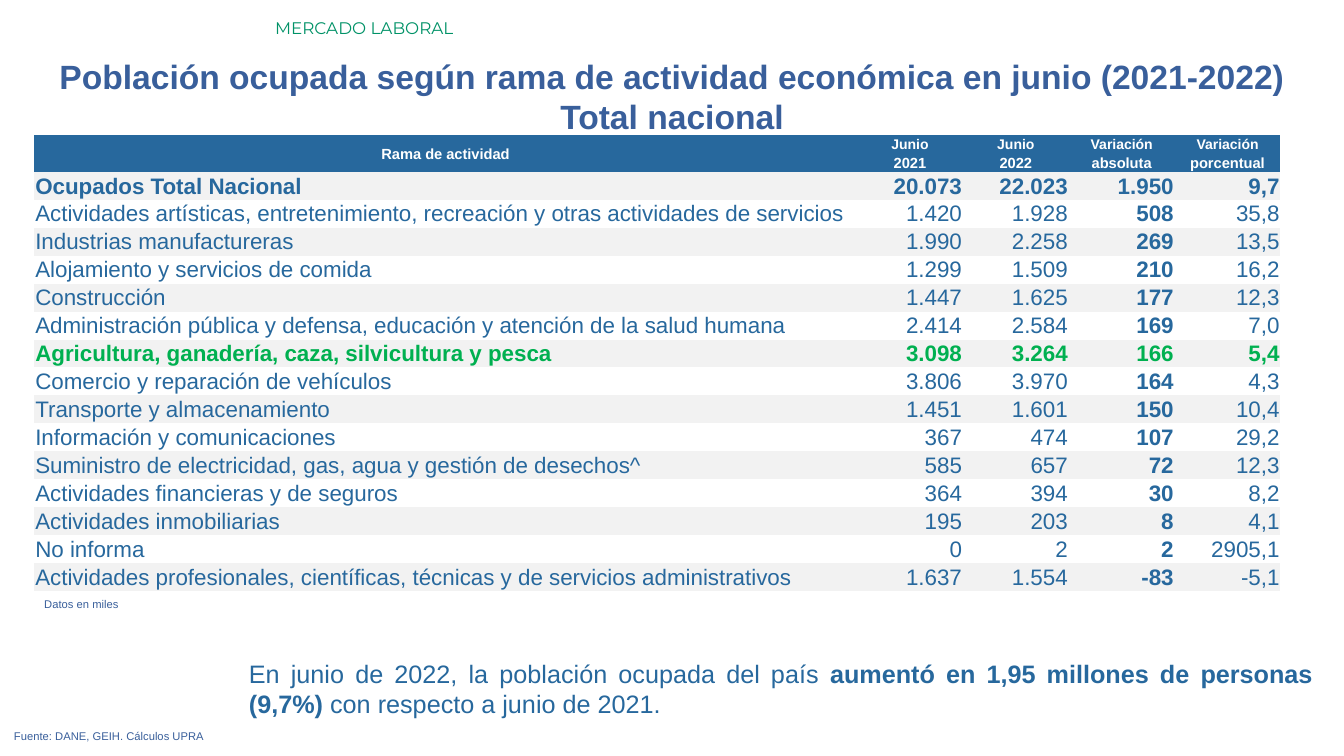
from dataclasses import dataclass

from pptx import Presentation
from pptx import util as u
from pptx.dml.color import RGBColor
from pptx.enum import text as t
from pptx.oxml import ns

COLORS = {
    "blue": "27689D",
    "navy": "395F9B",
    "teal": "009267",
    "green": "00B050",
    "band": "F2F2F2",
    "white": "FFFFFF",
}
LEFT, CENTER = t.PP_ALIGN.LEFT, t.PP_ALIGN.CENTER
RIGHT, JUSTIFY = t.PP_ALIGN.RIGHT, t.PP_ALIGN.JUSTIFY


@dataclass
class Branch:
    name: str
    june_2021: str
    june_2022: str
    change: str
    percent: str
    bold: bool = False
    color: str = "blue"


@dataclass
class Note:
    left: float
    top: float
    width: float
    height: float
    runs: list[tuple[str, bool]]
    size: float
    color: str
    align: t.PP_ALIGN = JUSTIFY
    font: str = "Arial"


HEADINGS = [
    ("Junio", "2021"),
    ("Junio", "2022"),
    ("Variación", "absoluta"),
    ("Variación", "porcentual"),
]
BRANCHES = [
    Branch("Ocupados Total Nacional", "20.073", "22.023", "1.950", "9,7", bold=True),
    Branch("Actividades artísticas, entretenimiento, recreación y otras actividades de servicios",
           "1.420", "1.928", "508", "35,8"),
    Branch("Industrias manufactureras", "1.990", "2.258", "269", "13,5"),
    Branch("Alojamiento y servicios de comida", "1.299", "1.509", "210", "16,2"),
    Branch("Construcción", "1.447", "1.625", "177", "12,3"),
    Branch("Administración pública y defensa, educación y atención de la salud humana",
           "2.414", "2.584", "169", "7,0"),
    Branch("Agricultura, ganadería, caza, silvicultura y pesca",
           "3.098", "3.264", "166", "5,4", bold=True, color="green"),
    Branch("Comercio y reparación de vehículos", "3.806", "3.970", "164", "4,3"),
    Branch("Transporte y almacenamiento", "1.451", "1.601", "150", "10,4"),
    Branch("Información y comunicaciones", "367", "474", "107", "29,2"),
    Branch("Suministro de electricidad, gas, agua y gestión de desechos^",
           "585", "657", "72", "12,3"),
    Branch("Actividades financieras y de seguros", "364", "394", "30", "8,2"),
    Branch("Actividades inmobiliarias", "195", "203", "8", "4,1"),
    Branch("No informa", "0", "2", "2", "2905,1"),
    Branch("Actividades profesionales, científicas, técnicas y de servicios administrativos",
           "1.637", "1.554", "-83", "-5,1"),
]
NOTES = [
    Note(2.63, 0.13, 10.7, 0.3, [("MERCADO LABORAL", False)], 12, "teal", LEFT, "Montserrat"),
    Note(2.37, 6.48, 10.75, 0.71, [
        ("En junio de 2022, la población ocupada del país ", False),
        ("aumentó en 1,95 millones de personas (9,7%) ", True),
        ("con respecto a junio de 2021.", False),
    ], 18, "blue"),
    Note(0.04, 7.19, 12.91, 0.24, [("Fuente: DANE, GEIH. Cálculos UPRA", False)], 8, "navy"),
    Note(0.34, 5.88, 12.91, 0.24, [("Datos en miles", False)], 8, "navy"),
]


def write(paragraph, text: str, *, size: float, color: str, bold: bool = False,
          align: t.PP_ALIGN = LEFT, font: str = "Arial") -> None:
    paragraph.alignment = align
    run = paragraph.add_run()
    run.text = text
    run.font.name = font
    run.font.size = u.Pt(size)
    run.font.bold = bold
    run.font.color.rgb = RGBColor.from_string(COLORS[color])


def add_title(slide) -> None:
    title = slide.shapes.title
    title.left, title.top = u.Inches(0), u.Inches(0.5)
    title.width, title.height = u.Inches(13.33), u.Inches(0.91)
    frame = title.text_frame
    frame.word_wrap = True
    frame.auto_size = t.MSO_AUTO_SIZE.NONE
    frame.vertical_anchor = t.MSO_ANCHOR.TOP
    style = dict(size=24, color="navy", bold=True, align=CENTER)
    write(frame.paragraphs[0],
          "Población ocupada según rama de actividad económica en junio (2021-2022)", **style)
    write(frame.add_paragraph(), "Total nacional", **style)


def add_note(slide, note: Note) -> None:
    box = slide.shapes.add_textbox(*map(u.Inches, (note.left, note.top, note.width, note.height)))
    frame = box.text_frame
    frame.word_wrap = True
    frame.auto_size = t.MSO_AUTO_SIZE.SHAPE_TO_FIT_TEXT
    for words, bold in note.runs:
        write(frame.paragraphs[0], words, size=note.size, color=note.color,
              bold=bold, align=note.align, font=note.font)


def fill_cell(cell, words: str, fill: str | None, **style) -> None:
    cell.margin_left = cell.margin_right = cell.margin_top = u.Inches(0.01)
    cell.margin_bottom = 0
    cell.vertical_anchor = t.MSO_ANCHOR.MIDDLE
    if fill:
        cell.fill.solid()
        cell.fill.fore_color.rgb = RGBColor.from_string(COLORS[fill])
    else:
        cell.fill.background()
    write(cell.text_frame.paragraphs[0], words, **style)


def add_employment_table(slide) -> None:
    height, heading_height = 4.52, 0.18
    branch_height = (height - 2 * heading_height) / len(BRANCHES)
    table = slide.shapes.add_table(
        len(BRANCHES) + 2, 5, u.Inches(0.34), u.Inches(1.34), u.Inches(12.36), u.Inches(height)
    ).table
    table.first_row = table.horz_banding = False
    no_grid = "{2D5ABB26-0587-4C30-8999-92F81FD0307C}"
    table._tbl.tblPr.find(ns.qn("a:tableStyleId")).text = no_grid
    for index, column in enumerate(table.columns):
        column.width = u.Inches(1.05 if index else 8.16)
    for index, row in enumerate(table.rows):
        row.height = u.Inches(heading_height if index < 2 else branch_height)

    heading = dict(fill="blue", color="white", bold=True, align=CENTER)
    table.cell(0, 0).merge(table.cell(1, 0))
    fill_cell(table.cell(0, 0), "Rama de actividad", size=10.5, **heading)
    for column, (upper, lower) in enumerate(HEADINGS, start=1):
        fill_cell(table.cell(0, column), upper, size=10, **heading)
        fill_cell(table.cell(1, column), lower, size=10.5, **heading)

    for index, branch in enumerate(BRANCHES):
        values = (branch.name, branch.june_2021, branch.june_2022, branch.change, branch.percent)
        for column, value in enumerate(values):
            fill_cell(table.cell(index + 2, column), value, None if index % 2 else "band",
                      size=16, color=branch.color, bold=branch.bold or column == 3,
                      align=RIGHT if column else LEFT)


def main() -> None:
    deck = Presentation()
    deck.slide_width, deck.slide_height = u.Inches(13.33), u.Inches(7.5)
    slide = deck.slides.add_slide(deck.slide_layouts[5])
    add_title(slide)
    for note in NOTES:
        add_note(slide, note)
    add_employment_table(slide)
    deck.save("out.pptx")


if __name__ == "__main__":
    main()
